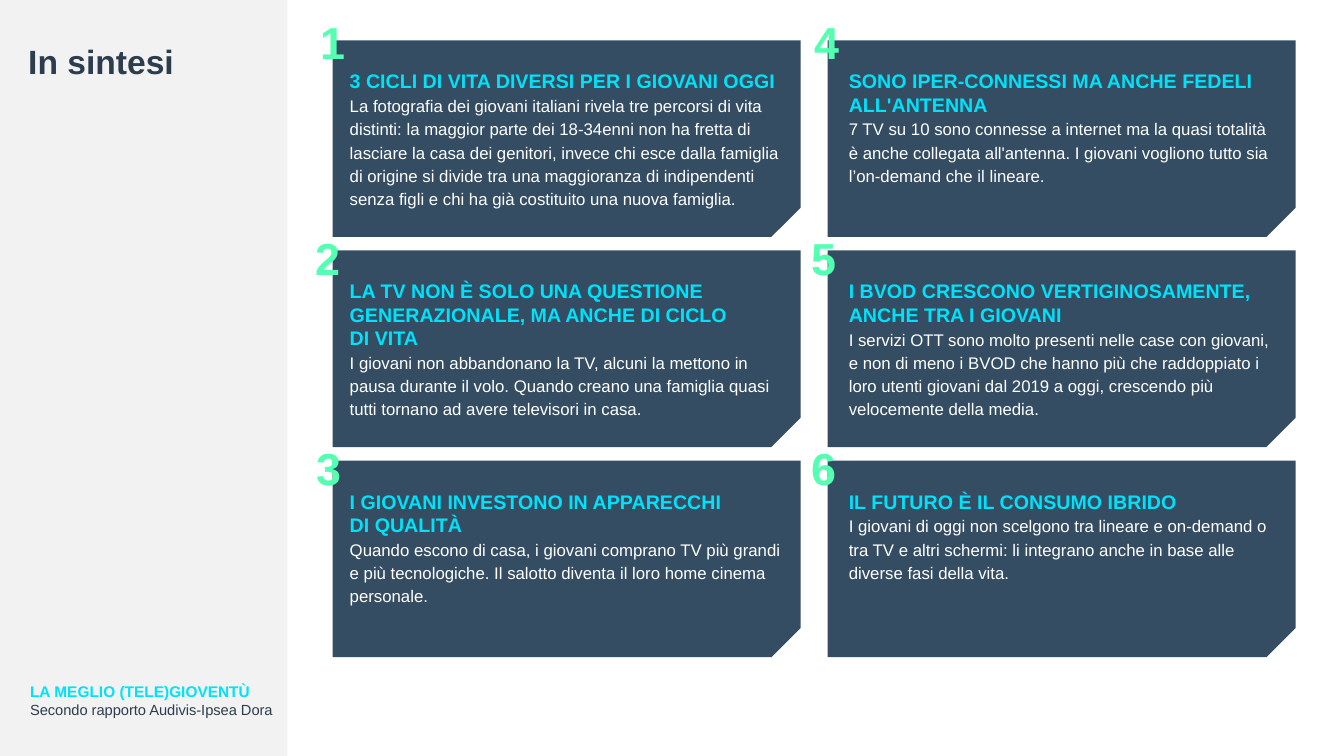
from dataclasses import dataclass

from pptx import Presentation
from pptx.dml.color import RGBColor
from pptx.enum.shapes import MSO_SHAPE
from pptx.enum.text import MSO_ANCHOR, MSO_AUTO_SIZE, PP_ALIGN
from pptx.util import Inches, Pt

TITLE = "In sintesi"
REPORT = "LA MEGLIO (TELE)GIOVENTÙ"
EDITION = "Secondo rapporto Audivis-Ipsea Dora"

# Heading and body of each card, down the first column and then the second;
# \v breaks a line, \n starts a paragraph
CARDS = [
    ("3 CICLI DI VITA DIVERSI PER I GIOVANI OGGI",
     "La fotografia dei giovani italiani rivela tre percorsi di vita distinti: "
     "la maggior parte dei 18-34enni non ha fretta di lasciare la casa dei genitori, "
     "invece chi esce dalla famiglia di origine si divide tra una maggioranza di "
     "indipendenti senza figli e chi ha già costituito una nuova famiglia."),
    ("LA TV NON È SOLO UNA QUESTIONE GENERAZIONALE, MA ANCHE DI CICLO \vDI VITA",
     "I giovani non abbandonano la TV, alcuni la mettono in pausa durante il volo. "
     "Quando creano una famiglia quasi tutti tornano ad avere televisori in casa."),
    ("I GIOVANI INVESTONO IN APPARECCHI\nDI QUALITÀ",
     "Quando escono di casa, i giovani comprano TV più grandi e più tecnologiche. "
     "Il salotto diventa il loro home cinema personale."),
    ("SONO IPER-CONNESSI MA ANCHE FEDELI ALL'ANTENNA",
     "7 TV su 10 sono connesse a internet ma la quasi totalità è anche collegata "
     "all'antenna. I giovani vogliono tutto sia l’on-demand che il lineare."),
    ("I BVOD CRESCONO VERTIGINOSAMENTE, ANCHE TRA I GIOVANI",
     "I servizi OTT sono molto presenti nelle case con giovani, e non di meno i BVOD "
     "che hanno più che raddoppiato i loro utenti giovani dal 2019 a oggi, "
     "crescendo più velocemente della media."),
    ("IL FUTURO È IL CONSUMO IBRIDO",
     "I giovani di oggi non scelgono tra lineare e on-demand o tra TV e altri schermi: "
     "li integrano anche in base alle diverse fasi della vita."),
]


@dataclass(frozen=True)
class Theme:
    font: str = "Arial"
    sidebar: str = "F2F2F2"
    ink: str = "2D3D4E"
    card: str = "354D63"
    accent: str = "00E1FA"
    number: str = "55FFB2"
    body: str = "FFFFFF"
    title_size: float = 24
    number_size: float = 32
    heading_size: float = 14
    body_size: float = 12
    report_size: float = 11
    edition_size: float = 10.5
    leading: float = 16.6


THEME = Theme()

# Card grid, in inches
ROWS = 3
GRID_LEFT, GRID_TOP = 3.3, 0.4
COLUMN_STEP, ROW_STEP = 4.91, 2.085
CARD_WIDTH, CARD_HEIGHT = 4.64, 1.95
SNIP = 0.148
COPY_INDENT, COPY_DROP = (0.07, 0.11), 0.24
COPY_WIDTH, COPY_HEIGHT = 4.48, 1.51
NUMBER_OUTDENT = (0.22, 0.27, 0.26, 0.23, 0.26, 0.26)
NUMBER_DROP = (0, 0.06, 0.06)


def style(run, size, color, bold=False):
    run.font.name = THEME.font
    run.font.size = Pt(size)
    run.font.bold = bold
    run.font.color.rgb = RGBColor.from_string(color)


def add_block(slide, kind, left, top, width, height, color):
    block = slide.shapes.add_shape(
        kind, Inches(left), Inches(top), Inches(width), Inches(height))
    block.shadow.inherit = False
    block.fill.solid()
    block.fill.fore_color.rgb = RGBColor.from_string(color)
    block.line.fill.background()
    return block


def add_text(slide, text, left, top, width, height, leading=None):
    frame = slide.shapes.add_textbox(
        Inches(left), Inches(top), Inches(width), Inches(height)).text_frame
    frame.word_wrap = True
    frame.auto_size = MSO_AUTO_SIZE.SHAPE_TO_FIT_TEXT
    frame.text = text
    for paragraph in frame.paragraphs:
        if leading:
            paragraph.line_spacing = Pt(leading)
    return [run for paragraph in frame.paragraphs for run in paragraph.runs]


def add_card(slide, index, heading, body):
    column, row = divmod(index, ROWS)
    left = GRID_LEFT + column * COLUMN_STEP
    top = GRID_TOP + row * ROW_STEP

    panel = add_block(slide, MSO_SHAPE.SNIP_1_RECTANGLE, left, top,
                      CARD_WIDTH, CARD_HEIGHT, THEME.card)
    panel.adjustments[0] = SNIP
    panel.element.spPr.xfrm.set("flipV", "1")

    *heading_runs, body_run = add_text(
        slide, f"{heading}\v{body}", left + COPY_INDENT[column], top + COPY_DROP,
        COPY_WIDTH, COPY_HEIGHT, THEME.leading)
    for run in heading_runs:
        style(run, THEME.heading_size, THEME.accent, bold=True)
    style(body_run, THEME.body_size, THEME.body)

    number_run, = add_text(
        slide, str(index + 1), left - NUMBER_OUTDENT[index], top + NUMBER_DROP[row],
        0.42, 0.38, THEME.leading)
    style(number_run, THEME.number_size, THEME.number, bold=True)


def add_sidebar(slide):
    title = slide.shapes.title
    sidebar = add_block(slide, MSO_SHAPE.RECTANGLE, 0, 0, 2.85, 7.5, THEME.sidebar)
    title.element.addprevious(sidebar.element)

    title.left, title.top = Inches(0.18), Inches(0.4)
    title.width, title.height = Inches(2.6), Inches(3.35)
    frame = title.text_frame
    frame.text = TITLE
    frame.vertical_anchor = MSO_ANCHOR.TOP
    frame.auto_size = MSO_AUTO_SIZE.NONE
    heading = frame.paragraphs[0]
    heading.alignment = PP_ALIGN.LEFT
    heading.line_spacing = 0.9
    style(heading.runs[0], THEME.title_size, THEME.ink, bold=True)

    report_run, edition_run = add_text(
        slide, f"{REPORT}\n{EDITION}", 0.2, 6.72, 5.78, 0.46)
    style(report_run, THEME.report_size, THEME.accent, bold=True)
    style(edition_run, THEME.edition_size, THEME.ink)


def main():
    deck = Presentation()
    deck.slide_width, deck.slide_height = Inches(13.33), Inches(7.5)
    slide = deck.slides.add_slide(deck.slide_layouts[5])
    add_sidebar(slide)
    for index, (heading, body) in enumerate(CARDS):
        add_card(slide, index, heading, body)
    deck.save("out.pptx")


if __name__ == "__main__":
    main()
